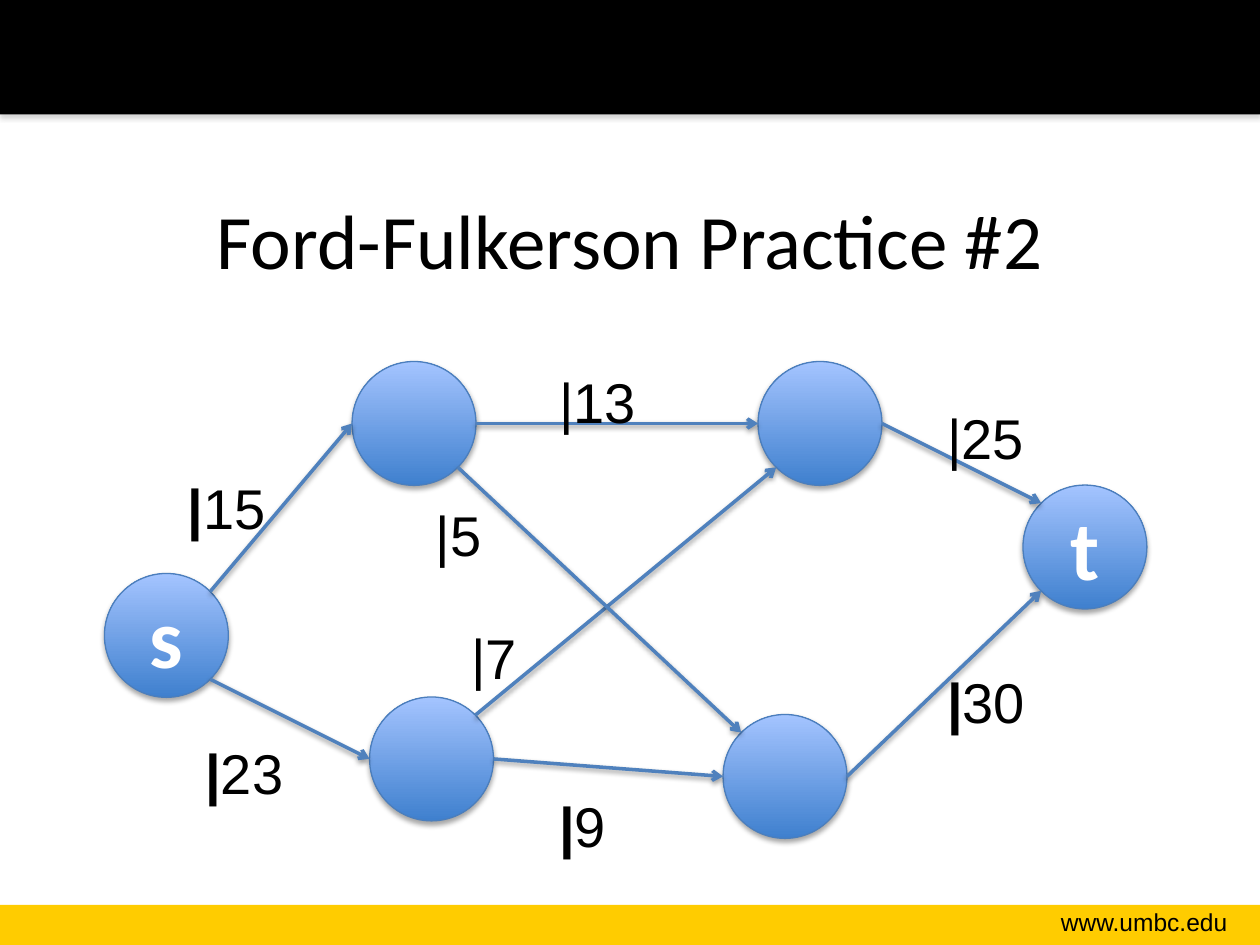
import math
from dataclasses import dataclass

import lxml.etree
import pptx
import pptx.dml.color
import pptx.enum.shapes
import pptx.enum.text
import pptx.oxml.ns
import pptx.util

Pt = pptx.util.Pt
RGB = pptx.dml.color.RGBColor.from_string
Kind = pptx.enum.shapes.MSO_SHAPE
Align = pptx.enum.text.PP_ALIGN
Anchor = pptx.enum.text.MSO_ANCHOR
qn = pptx.oxml.ns.qn


@dataclass(frozen=True)
class Theme:
    black: str = "000000"
    white: str = "FFFFFF"
    gold: str = "FFCC00"
    grey: str = "808080"
    dark: str = "3F80CE"
    light: str = "A4C4FF"
    rim: str = "4B7EBC"
    edge: str = "4F81BD"
    head: str = "Calibri"
    body: str = "Arial"
    title: int = 44
    node: int = 48
    label: int = 32
    foot: int = 14


theme = Theme()
SIZE = 70.8  # node diameter

# Node name: centre x, centre y, text
NODES = {
    "s": (95.1, 363.1, "s"),
    "a": (236.6, 242, ""),
    "b": (246.6, 433.7, ""),
    "c": (468.6, 242, ""),
    "d": (448.6, 443.7, ""),
    "t": (620, 312.6, "t"),
}

# Start node, angle it leaves at, end node, angle it arrives at (clockwise)
EDGES = [
    ("s", -45, "a", 180),
    ("s", 45, "b", 180),
    ("a", 0, "c", 180),
    ("b", 0, "d", 180),
    ("d", 0, "t", 135),
    ("c", 0, "t", 225),
    ("b", -45, "c", 135),
    ("a", 45, "d", 225),
]

# Left, top, width, capacity, bold bar
LABELS = [
    (100.1, 267.1, 59.8, "15", True),
    (312.5, 448.6, 41.8, "9", True),
    (312.5, 206.6, 59, "13", False),
    (534.2, 378, 90.7, "30", True),
    (110.2, 418.3, 59.8, "23", True),
    (241.9, 282.2, 41, "5", False),
    (534.2, 226.8, 59, "25", False),
    (262.1, 352.8, 41, "7", False),
]


def shade(shape, color, alpha, dist):
    """Give a shape or connector a soft shadow straight below it."""
    props = shape._element.spPr
    effects = lxml.etree.SubElement(props, qn("a:effectLst"))
    outer = lxml.etree.SubElement(
        effects, qn("a:outerShdw"), blurRad=str(Pt(3.1)), dist=str(Pt(dist)),
        dir="5400000", rotWithShape="0")
    tint = lxml.etree.SubElement(outer, qn("a:srgbClr"), val=color)
    lxml.etree.SubElement(tint, qn("a:alpha"), val=str(alpha * 1000))


def style(run, font, size, color, bold=False):
    run.font.name = font
    run.font.size = Pt(size)
    run.font.color.rgb = RGB(color)
    run.font.bold = bold


def bar(slide, top, height, color):
    shape = slide.shapes.add_shape(
        Kind.RECTANGLE, 0, Pt(top), Pt(720), Pt(height))
    shape.fill.solid()
    shape.fill.fore_color.rgb = RGB(color)
    shape.line.fill.background()
    return shape


def text(slide, box, words, font, size, align=Align.LEFT, wrap=True):
    """Add a text box with one run for each of the words."""
    shape = slide.shapes.add_textbox(*map(Pt, box))
    frame = shape.text_frame
    frame.word_wrap = wrap
    para = frame.paragraphs[0]
    para.alignment = align
    for word, bold in words:
        run = para.add_run()
        run.text = word
        style(run, font, size, theme.black, bold)
    return frame


def node(slide, x, y, name):
    shape = slide.shapes.add_shape(
        Kind.OVAL, Pt(x - SIZE / 2), Pt(y - SIZE / 2), Pt(SIZE), Pt(SIZE))
    shape.fill.gradient()
    shape.fill.gradient_angle = 90
    for stop, color in zip(shape.fill.gradient_stops, (theme.dark, theme.light)):
        stop.color.rgb = RGB(color)
        stop.position = 0 if color == theme.dark else 1
    shape.line.color.rgb = RGB(theme.rim)
    shape.line.width = Pt(0.75)
    shade(shape, theme.black, 35, 1.8)
    if name:
        frame = shape.text_frame
        frame.text = name
        frame.vertical_anchor = Anchor.MIDDLE
        para = frame.paragraphs[0]
        para.alignment = Align.CENTER
        style(para.runs[0], theme.head, theme.node, theme.white, True)


def rim(name, angle):
    """Return the point on a node's outline at an angle."""
    x, y, _ = NODES[name]
    turn = math.radians(angle)
    return (Pt(x + SIZE / 2 * math.cos(turn)),
            Pt(y + SIZE / 2 * math.sin(turn)))


def edge(slide, start, leave, end, arrive):
    line = slide.shapes.add_connector(
        pptx.enum.shapes.MSO_CONNECTOR.STRAIGHT,
        *rim(start, leave), *rim(end, arrive))
    line.line.color.rgb = RGB(theme.edge)
    line.line.width = Pt(2)
    lxml.etree.SubElement(
        line.line._get_or_add_ln(), qn("a:tailEnd"), type="arrow")
    shade(line, theme.black, 38, 1.6)


def main():
    deck = pptx.Presentation()
    deck.slide_width, deck.slide_height = Pt(720), Pt(540)
    slide = deck.slides.add_slide(deck.slide_layouts[6])

    # Bands, footer and title
    bar(slide, 517, 23, theme.gold).shadow.inherit = False
    shade(bar(slide, 0, 65.4, theme.black), theme.grey, 35, 1.8)
    text(slide, (565.2, 514.8, 143.3, 24.5), [("www.umbc.edu", False)],
         theme.body, theme.foot, Align.RIGHT)
    title = text(slide, (36, 91.4, 648, 90),
                 [("Ford-Fulkerson Practice #2", False)],
                 theme.head, theme.title, Align.CENTER)
    title.vertical_anchor = Anchor.MIDDLE

    # Flow network
    for spot in NODES.values():
        node(slide, *spot)
    for link in EDGES:
        edge(slide, *link)

    # Capacities
    for left, top, width, value, bold in LABELS:
        words = [("|", True), (value, False)] if bold else [("|" + value, False)]
        text(slide, (left, top, width, 46), words,
             theme.body, theme.label, wrap=False)

    deck.save("out.pptx")


if __name__ == "__main__":
    main()
